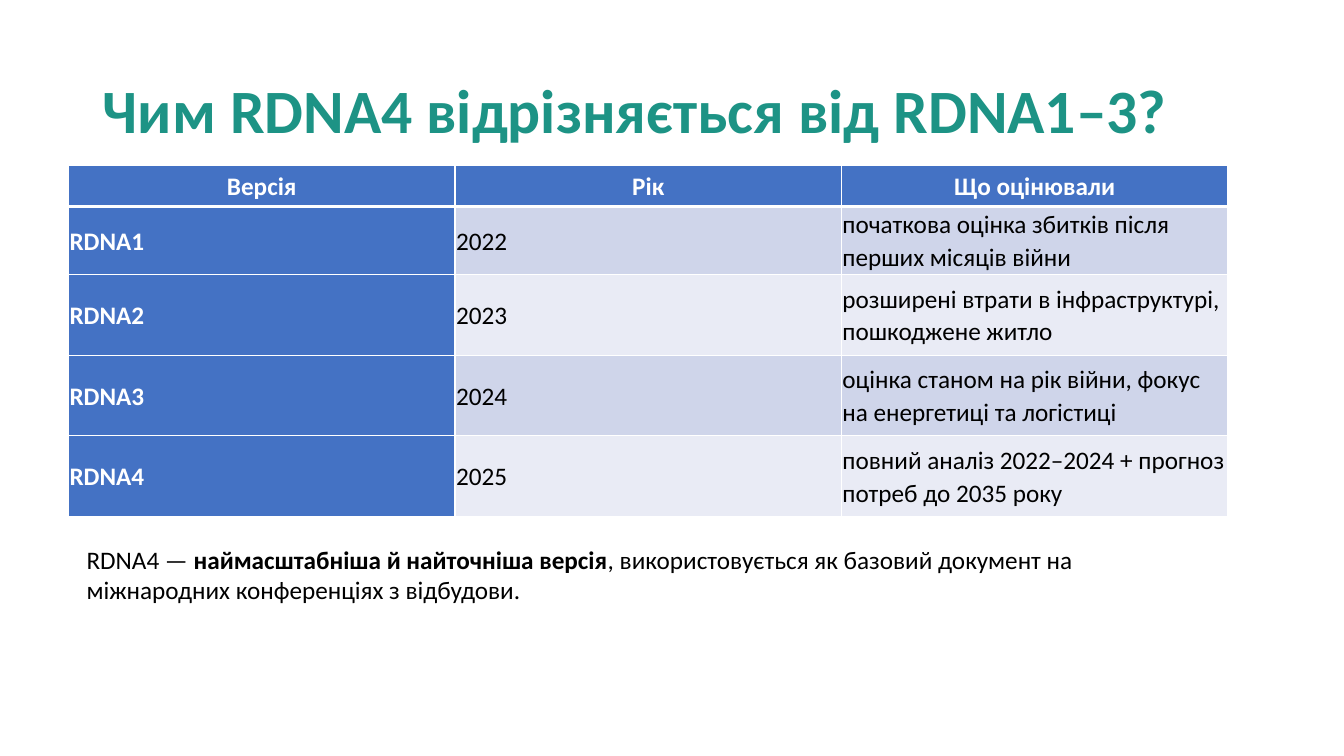
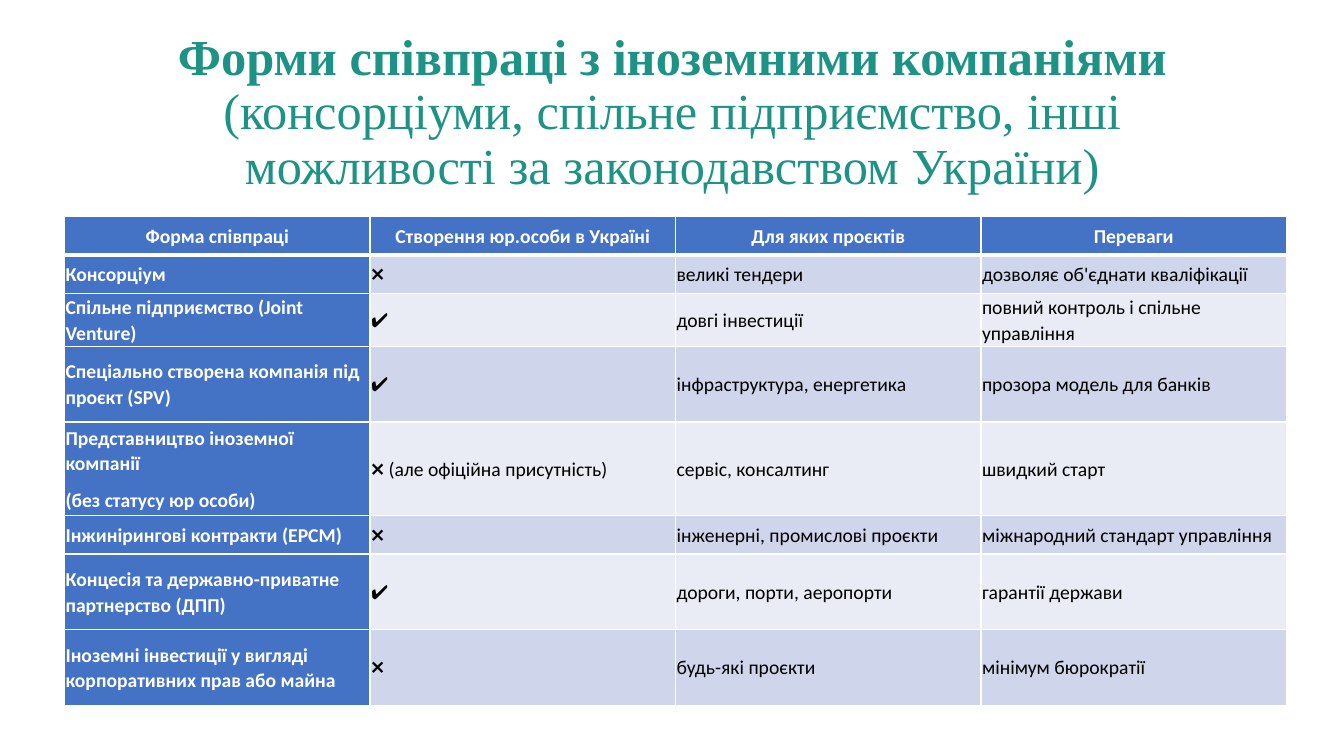
import pptx
import pptx.dml.color
import pptx.enum.text
import pptx.oxml
import pptx.oxml.ns
import pptx.util
from pptx.util import Inches

TEAL, BLUE, WHITE, BLACK = "1D9385", "4472C4", "FFFFFF", "000000"
BANDS = "CFD5EA", "E9EBF5"
ALIGN = pptx.enum.text.PP_ALIGN
MIDDLE = pptx.enum.text.MSO_ANCHOR.MIDDLE
FIT = pptx.enum.text.MSO_AUTO_SIZE

# Text is a list of paragraphs; a paragraph is a list of (words, bold) runs.
SLIDES = [
    {
        "title": [("Чим RDNA4 відрізняється від RDNA1–3?", True)],
        "style": {"size": 44, "font": "Calibri", "align": ALIGN.LEFT},
        "table": {"left": 0.68, "top": 1.64, "width": 11.5, "size": 18},
        "heights": [0.41, 0.67, 0.8, 0.8, 0.8],
        "rows": [
            ("Версія", "Рік", "Що оцінювали"),
            ("RDNA1", "2022", "початкова оцінка збитків після перших місяців війни"),
            ("RDNA2", "2023", "розширені втрати в інфраструктурі, пошкоджене житло"),
            ("RDNA3", "2024", "оцінка станом на рік війни, фокус на енергетиці та логістиці"),
            ("RDNA4", "2025", "повний аналіз 2022–2024 + прогноз потреб до 2035 року"),
        ],
        "note": [
            ("RDNA4 — ", False),
            ("наймасштабніша й найточніша версія", True),
            (", використовується як базовий документ на міжнародних "
             "конференціях з відбудови.", False),
        ],
    },
    {
        "title": [
            ("Форми співпраці з іноземними компаніями ", True),
            ("(консорціуми, спільне підприємство, інші можливості "
             "за законодавством України)", False),
        ],
        "style": {"size": 36, "font": "Times New Roman", "align": ALIGN.CENTER},
        "table": {"left": 0.64, "top": 2.15, "width": 12.12, "size": 14},
        "heights": [0.38, 0.38, 0.52, 0.75, 0.93, 0.38, 0.75, 0.75],
        "rows": [
            ("Форма співпраці", "Створення юр.особи в Україні",
             "Для яких проєктів", "Переваги"),
            ("Консорціум", "❌", "великі тендери", "дозволяє об'єднати кваліфікації"),
            ("Спільне підприємство (Joint Venture)", "✔", "довгі інвестиції",
             "повний контроль і спільне управління"),
            ("Спеціально створена компанія під проєкт (SPV)", "✔",
             "інфраструктура, енергетика", "прозора модель для банків"),
            ("Представництво іноземної компанії\n(без статусу юр особи)",
             "❌ (але офіційна присутність)", "сервіс, консалтинг", "швидкий старт"),
            ("Інжинірингові контракти (EPCM)", "❌", "інженерні, промислові проєкти",
             "міжнародний стандарт управління"),
            ("Концесія та державно-приватне партнерство (ДПП)", "✔",
             "дороги, порти, аеропорти", "гарантії держави"),
            ("Іноземні інвестиції у вигляді корпоративних прав або майна", "❌",
             "будь-які проєкти", "мінімум бюрократії"),
        ],
    },
]


def color(code):
    return pptx.dml.color.RGBColor.from_string(code)


def write(frame, paras, size=18, font="Calibri", ink=BLACK,
          align=ALIGN.LEFT, lead=None, after=None):
    for i, runs in enumerate(paras):
        para = frame.add_paragraph() if i else frame.paragraphs[0]
        para.alignment = align
        para.line_spacing = lead
        if after is not None:
            para.space_after = pptx.util.Pt(after)
        for words, bold in runs:
            run = para.add_run()
            run.text = words
            run.font.size = pptx.util.Pt(size)
            run.font.name = font
            run.font.bold = bold
            run.font.color.rgb = color(ink)


def edge(cell, **widths):
    """Draw white cell borders; widths are points, keyed by side L, R, T, B."""
    props = cell._tc.get_or_add_tcPr()
    for i, (side, width) in enumerate(widths.items()):
        props.insert(i, pptx.oxml.parse_xml(
            f'<a:ln{side} {pptx.oxml.ns.nsdecls("a")} w="{pptx.util.Pt(width)}">'
            f'<a:solidFill><a:srgbClr val="{WHITE}"/></a:solidFill></a:ln{side}>'))


def add_title(slide, runs, style):
    title = slide.shapes.title
    title.left, title.top = Inches(0.92), Inches(0.4)
    title.width, title.height = Inches(11.5), Inches(1.45)
    frame = title.text_frame
    frame.word_wrap = True
    frame.auto_size = FIT.NONE
    frame.vertical_anchor = MIDDLE
    write(frame, [runs], ink=TEAL, lead=0.9, **style)


def add_grid(slide, rows, heights, left, top, width, size):
    count = len(rows[0])
    grid = slide.shapes.add_table(
        len(rows), count, Inches(left), Inches(top),
        Inches(width), Inches(sum(heights))).table
    grid.first_col = True
    for col in grid.columns:
        col.width = Inches(width / count)
    for r, (row, height) in enumerate(zip(rows, heights)):
        grid.rows[r].height = Inches(height)
        for c, words in enumerate(row):
            cell = grid.cell(r, c)
            head = r == 0 or c == 0
            cell.fill.solid()
            cell.fill.fore_color.rgb = color(BLUE if head else BANDS[(r - 1) % 2])
            edge(cell, L=1, R=1, T=3 if r == 1 else 1, B=3 if r == 0 else 1)
            cell.vertical_anchor = MIDDLE
            cell.margin_left = cell.margin_right = Inches(0.01)
            cell.margin_top = cell.margin_bottom = Inches(0.01)
            write(cell.text_frame, [[(line, head)] for line in words.split("\n")],
                  size=size, ink=WHITE if head else BLACK, lead=1.07, after=8,
                  align=ALIGN.LEFT if r else ALIGN.CENTER)


def add_note(slide, runs):
    box = slide.shapes.add_textbox(
        Inches(0.76), Inches(5.35), Inches(11.42), Inches(0.71))
    box.text_frame.word_wrap = True
    box.text_frame.auto_size = FIT.SHAPE_TO_FIT_TEXT
    write(box.text_frame, [runs])


def main():
    deck = pptx.Presentation()
    deck.slide_width, deck.slide_height = Inches(13.33), Inches(7.5)
    for data in SLIDES:
        slide = deck.slides.add_slide(deck.slide_layouts[5])
        add_title(slide, data["title"], data["style"])
        add_grid(slide, data["rows"], data["heights"], **data["table"])
        if "note" in data:
            add_note(slide, data["note"])
    deck.save("out.pptx")


if __name__ == "__main__":
    main()
